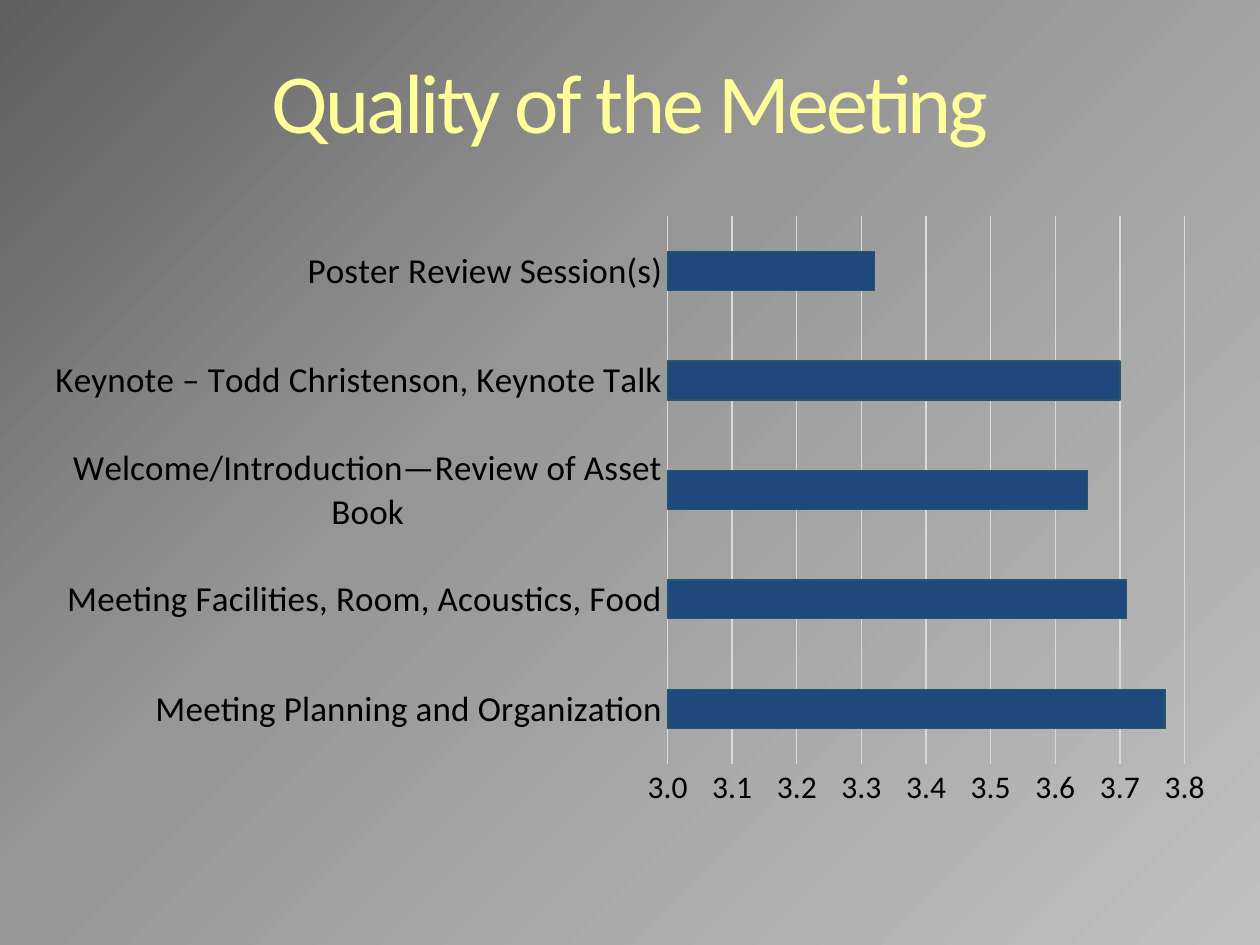
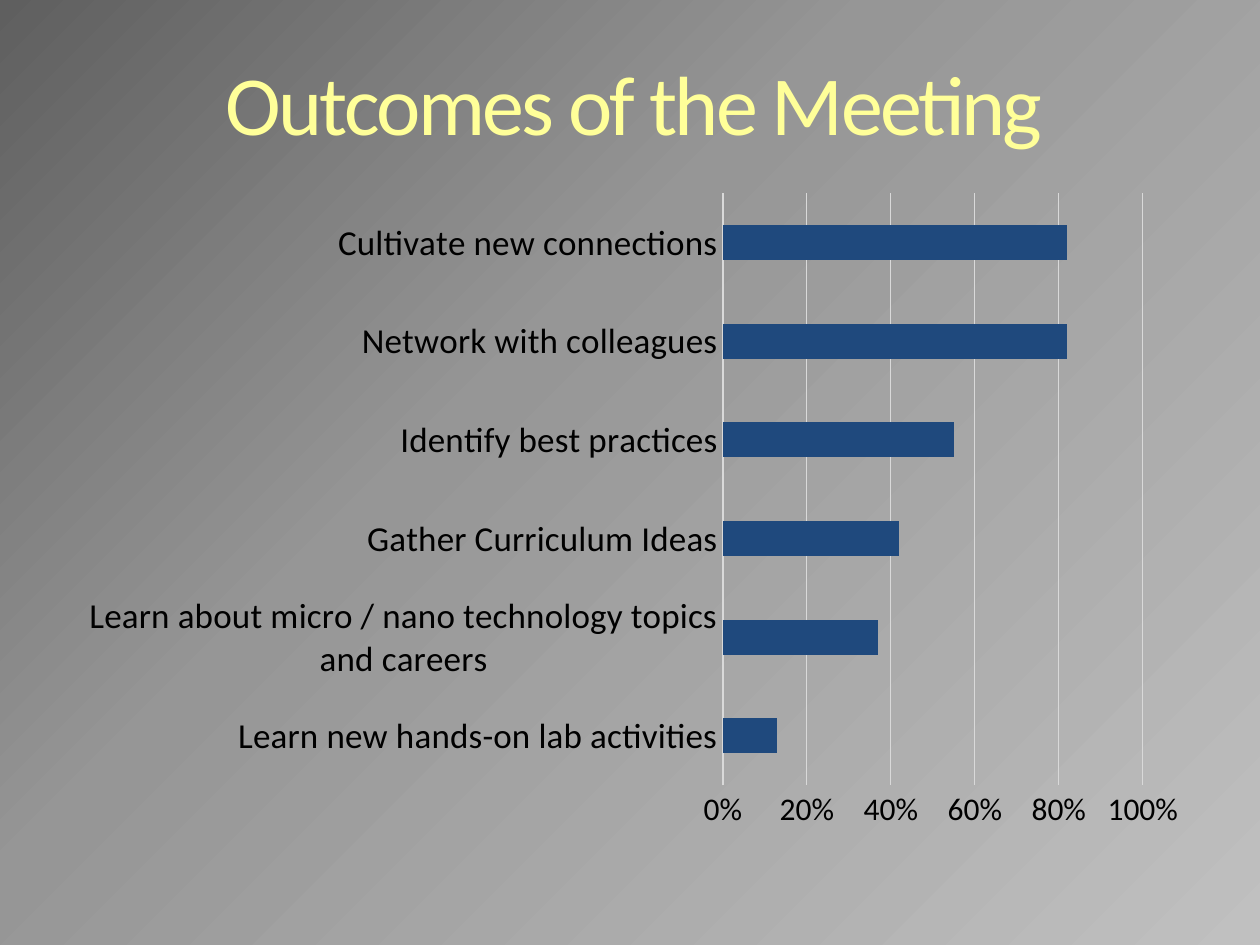
from dataclasses import dataclass
from lxml import etree
from pptx import Presentation
from pptx.chart.data import CategoryChartData
from pptx.dml.color import RGBColor
from pptx.enum.chart import XL_CHART_TYPE, XL_TICK_MARK
from pptx.enum.text import MSO_ANCHOR, PP_ALIGN
from pptx.oxml.ns import qn
from pptx.util import Inches, Pt

BAR = XL_CHART_TYPE.BAR_CLUSTERED
NO_TICK = XL_TICK_MARK.NONE
MIDDLE = MSO_ANCHOR.MIDDLE
CENTER = PP_ALIGN.CENTER


@dataclass(frozen=True)
class Theme:
    font: str = "Calibri"
    title_size: int = 48
    title_spacing: int = -150
    category_size: int = 20
    value_size: int = 18
    text: str = "000000"
    bar: str = "1F497D"
    bar_edge: str = "215968"
    grid: str = "D9D9D9"
    hairline: float = 0.75
    bar_gap: int = 182
    backdrop: tuple = ((0, "5F5F5F"), (40, "969696"), (100, "C0C0C0"))
    title_fill: tuple = ((0, "FFFFB9"), (36, "FFFF99"), (86, "F6AE1E"))


theme = Theme()


def set_gradient(fill, parent, stops, angle):
    fill.gradient()
    gradient = parent.find(".//" + qn("a:gradFill"))
    stop_list = gradient.find(qn("a:gsLst"))
    for stop in list(stop_list):
        stop_list.remove(stop)
    for position, colour in stops:
        stop = etree.SubElement(stop_list, qn("a:gs"), pos=str(position * 1000))
        etree.SubElement(stop, qn("a:srgbClr"), val=colour)
    gradient.find(qn("a:lin")).set("ang", str(angle * 60000))


def set_line(line, colour):
    line.color.rgb = RGBColor.from_string(colour)
    line.width = Pt(theme.hairline)


pages = [
    {
        "title": "Quality of the Meeting",
        "title_at": (0.5, 0.17, 9, 1.25),
        "chart_at": (0.25, 1.62, 9.5, 4.88),
        "scale": (3.0, 3.8, 0.1),
        "format": "0.0",
        "edge": theme.bar_edge,
        "ratings": {
            "Meeting Planning and Organization": 3.77,
            "Meeting Facilities, Room, Acoustics, Food": 3.71,
            "Welcome/Introduction—Review of Asset Book": 3.65,
            "Keynote – Todd Christenson, Keynote Talk": 3.7,
            "Poster Review Session(s)": 3.32,
        },
    },
    {
        "title": "Outcomes of the Meeting",
        "title_at": (0.53, 0.18, 9, 1.25),
        "chart_at": (0.53, 1.43, 9, 5.25),
        "scale": (0, 1, 0.2),
        "format": "0%",
        "edge": None,
        "ratings": {
            "Learn new hands-on lab activities": 0.13,
            "Learn about micro / nano technology topics and careers": 0.37,
            "Gather Curriculum Ideas": 0.42,
            "Identify best practices": 0.55,
            "Network with colleagues": 0.82,
            "Cultivate new connections": 0.82,
        },
    },
]

deck = Presentation()
deck.slide_width = Inches(10)
deck.slide_height = Inches(7.5)
blank_layout = deck.slide_layouts[6]

for page in pages:
    slide = deck.slides.add_slide(blank_layout)
    set_gradient(slide.background.fill, slide.element, theme.backdrop, 45)

    title_box = slide.shapes.add_textbox(*map(Inches, page["title_at"]))
    frame = title_box.text_frame
    frame.word_wrap = True
    frame.vertical_anchor = MIDDLE
    para = frame.paragraphs[0]
    para.alignment = CENTER
    span = para.add_run()
    span.text = page["title"]
    span.font.name = theme.font
    span.font.size = Pt(theme.title_size)
    set_gradient(span.font.fill, title_box.element, theme.title_fill, 90)
    title_box.element.find(".//" + qn("a:rPr")).set("spc", str(theme.title_spacing))

    chart_data = CategoryChartData(number_format=page["format"])
    chart_data.categories = list(page["ratings"])
    chart_data.add_series("Series 1", page["ratings"].values())
    chart_frame = slide.shapes.add_chart(BAR, *map(Inches, page["chart_at"]), chart_data)
    chart = chart_frame.chart
    chart.has_title = False
    chart.has_legend = False

    plot = chart.plots[0]
    plot.gap_width = theme.bar_gap
    plot.vary_by_categories = False
    bars = plot.series[0].format
    bars.fill.solid()
    bars.fill.fore_color.rgb = RGBColor.from_string(theme.bar)
    if page["edge"]:
        set_line(bars.line, page["edge"])
    else:
        bars.line.fill.background()

    category_axis, value_axis = chart.category_axis, chart.value_axis
    for axis, size in ((category_axis, theme.category_size), (value_axis, theme.value_size)):
        axis.major_tick_mark = NO_TICK
        axis.minor_tick_mark = NO_TICK
        label_font = axis.tick_labels.font
        label_font.name = theme.font
        label_font.size = Pt(size)
        label_font.color.rgb = RGBColor.from_string(theme.text)

    set_line(category_axis.format.line, theme.grid)
    value_axis.format.line.fill.background()
    value_axis.has_major_gridlines = True
    set_line(value_axis.major_gridlines.format.line, theme.grid)
    value_axis.minimum_scale, value_axis.maximum_scale, value_axis.major_unit = page["scale"]
    value_axis.tick_labels.number_format = page["format"]
    value_axis.tick_labels.number_format_is_linked = False

deck.save("out.pptx")
